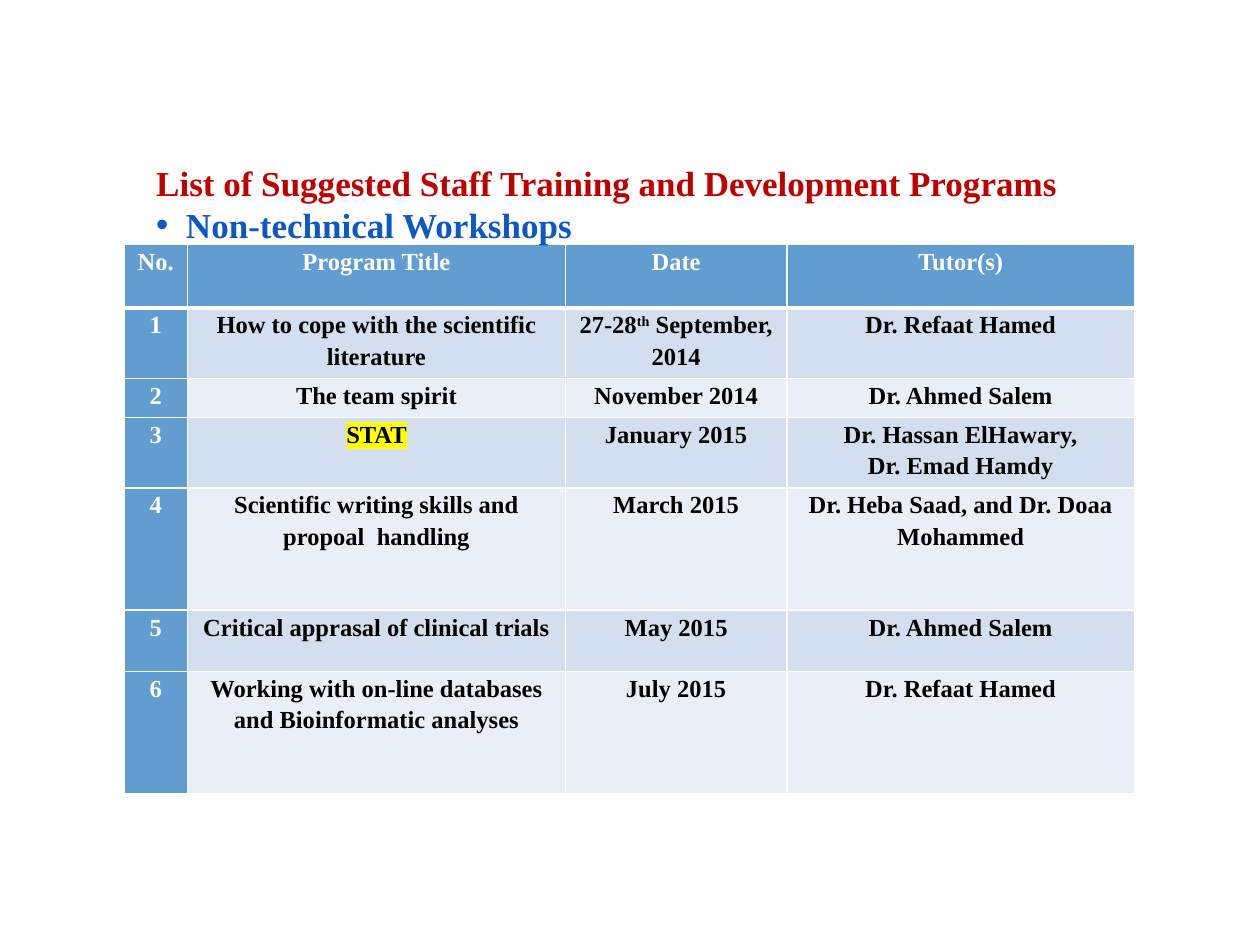
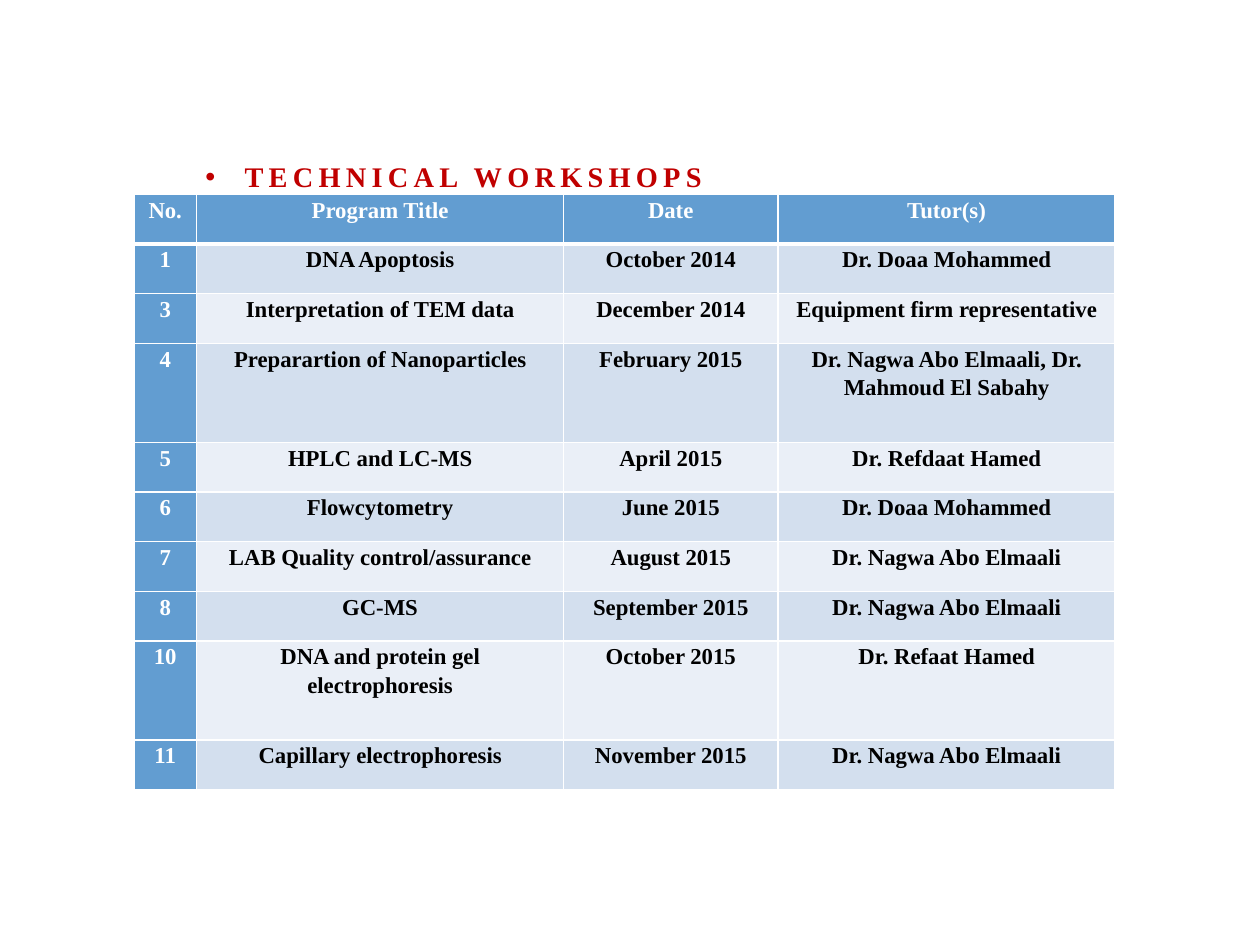
from lxml import etree
from pptx import Presentation
from pptx import util as u
from pptx.dml.color import RGBColor
from pptx.enum import text
from pptx.oxml import ns

FONT = "Times New Roman"
WHITE = RGBColor(0xFF, 0xFF, 0xFF)
BLACK = RGBColor(0, 0, 0)
RED = RGBColor(0xC0, 0, 0)
BLUE = RGBColor(0x0E, 0x58, 0xC4)
HEADER_BLUE = RGBColor(0x62, 0x9D, 0xD1)
BANDS = [RGBColor(0xD3, 0xDF, 0xEE), RGBColor(0xEA, 0xEF, 0xF7)]
HEADINGS = ("No.", "Program Title", "Date", "Tutor(s)")


def style_line(paragraph, size, color, hanging=None):
    """Make a bold line of text, bulleted when a hanging indent is given."""
    if hanging is not None:
        props = paragraph._p.get_or_add_pPr()
        props.set("marL", str(hanging))
        props.set("indent", str(-hanging))
        etree.SubElement(props, ns.qn("a:buFont")).set("typeface", "Arial")
        etree.SubElement(props, ns.qn("a:buChar")).set("char", "•")
    paragraph.font.name = FONT
    paragraph.font.size = u.Pt(size)
    paragraph.font.bold = True
    paragraph.font.color.rgb = color


def add_schedule(slide, left, top, widths, heights, programs, size):
    """Add a workshop table with a blue header row and number column."""
    table = slide.shapes.add_table(
        len(heights), len(widths), u.Cm(left), u.Cm(top),
        u.Cm(sum(widths)), u.Cm(sum(heights))).table
    table.first_col = True
    for column, width in zip(table.columns, widths):
        column.width = u.Cm(width)
    for row, height in zip(table.rows, heights):
        row.height = u.Cm(height)
    for r, entries in enumerate([HEADINGS] + programs):
        for c, entry in enumerate(entries):
            cell = table.cell(r, c)
            cell.text = entry
            cell.margin_left = cell.margin_right = u.Cm(0.18)
            cell.margin_top = cell.margin_bottom = 0
            for side in "LRTB":
                below_header = (r, side) in [(0, "B"), (1, "T")]
                border = etree.SubElement(cell._tc.get_or_add_tcPr(), ns.qn("a:ln" + side))
                border.set("w", str(u.Pt(3 if below_header else 1)))
                paint = etree.SubElement(border, ns.qn("a:solidFill"))
                etree.SubElement(paint, ns.qn("a:srgbClr")).set("val", str(WHITE))
            is_header = r == 0 or c == 0
            cell.fill.solid()
            cell.fill.fore_color.rgb = HEADER_BLUE if is_header else BANDS[(r - 1) % 2]
            for paragraph in cell.text_frame.paragraphs:
                paragraph.alignment = text.PP_ALIGN.CENTER
                paragraph.line_spacing = 1.15
                style_line(paragraph, size, WHITE if is_header else BLACK)
    return table


prs = Presentation()
prs.slide_width, prs.slide_height = u.Cm(25.4), u.Cm(19.05)
blank = prs.slide_layouts[6]

# Non-technical workshops
slide = prs.slides.add_slide(blank)
non_technical = [
    ("1", "How to cope with the scientific literature", "", "Dr. Refaat Hamed"),
    ("2", "The team spirit", "November 2014", "Dr. Ahmed Salem"),
    ("3", "STAT", "January 2015", "Dr. Hassan ElHawary,\nDr. Emad Hamdy"),
    ("4", "Scientific writing skills and propoal  handling", "March 2015",
     "Dr. Heba Saad, and Dr. Doaa Mohammed"),
    ("5", "Critical apprasal of clinical trials", "May 2015", "Dr. Ahmed Salem"),
    ("6", "Working with on-line databases and Bioinformatic analyses", "July 2015",
     "Dr. Refaat Hamed"),
]
schedule = add_schedule(slide, 2.5, 4.93, [1.28, 7.62, 4.46, 7.01],
                        [1.28, 1.42, 0.79, 1.42, 2.46, 1.24, 2.46], non_technical, 14)

first_date = schedule.cell(1, 2).text_frame.paragraphs[0]
for part in ("27-28", "th", " September, 2014"):
    run = first_date.add_run()
    run.text = part
    if part == "th":
        run.font._element.set("baseline", "30000")

statistics = schedule.cell(3, 1).text_frame.paragraphs[0].runs[0]
highlight = etree.SubElement(statistics.font._element, ns.qn("a:highlight"))
etree.SubElement(highlight, ns.qn("a:srgbClr")).set("val", "FFFF00")

heading = slide.shapes.add_textbox(u.Cm(2.9), u.Cm(3.12), u.Cm(19), u.Cm(1.96)).text_frame
heading.word_wrap = True
heading.vertical_anchor = text.MSO_ANCHOR.MIDDLE
heading.text = "List of Suggested Staff Training and Development Programs\nNon-technical Workshops"
style_line(heading.paragraphs[0], 20, RED)
style_line(heading.paragraphs[1], 20, BLUE, u.Cm(0.6))

# Technical workshops
slide = prs.slides.add_slide(blank)
heading = slide.shapes.add_textbox(u.Cm(3.89), u.Cm(2.72), u.Cm(17.78), u.Cm(1.9)).text_frame
heading.word_wrap = True
heading.vertical_anchor = text.MSO_ANCHOR.BOTTOM
heading.margin_bottom = u.Cm(0.72)
heading.text = "TECHNICAL WORKSHOPS"
heading.paragraphs[0].line_spacing = 1.15
style_line(heading.paragraphs[0], 16.2, RED, u.Cm(0.79))
heading.paragraphs[0].runs[0].font._element.set("spc", "300")

technical = [
    ("1", "DNA Apoptosis", "October 2014", "Dr. Doaa Mohammed"),
    ("3", "Interpretation of TEM data", "December 2014", "Equipment firm representative"),
    ("4", "Preparartion of Nanoparticles", "February 2015",
     "Dr. Nagwa Abo Elmaali, Dr. Mahmoud El Sabahy"),
    ("5", "HPLC and LC-MS", "April 2015", "Dr. Refdaat Hamed"),
    ("6", "Flowcytometry", "June 2015", "Dr. Doaa Mohammed"),
    ("7", "LAB Quality control/assurance", "August 2015", "Dr. Nagwa Abo Elmaali"),
    ("8", "GC-MS", "September 2015", "Dr. Nagwa Abo Elmaali"),
    ("10", "DNA and protein gel electrophoresis", "October 2015", "Dr. Refaat Hamed"),
    ("11", "Capillary electrophoresis", "November 2015", "Dr. Nagwa Abo Elmaali"),
]
add_schedule(slide, 2.7, 3.92, [1.26, 7.4, 4.32, 6.8],
             [2 if number in ("4", "10") else 1 for number, *_ in [HEADINGS] + technical],
             technical, 13)

prs.save("out.pptx")
